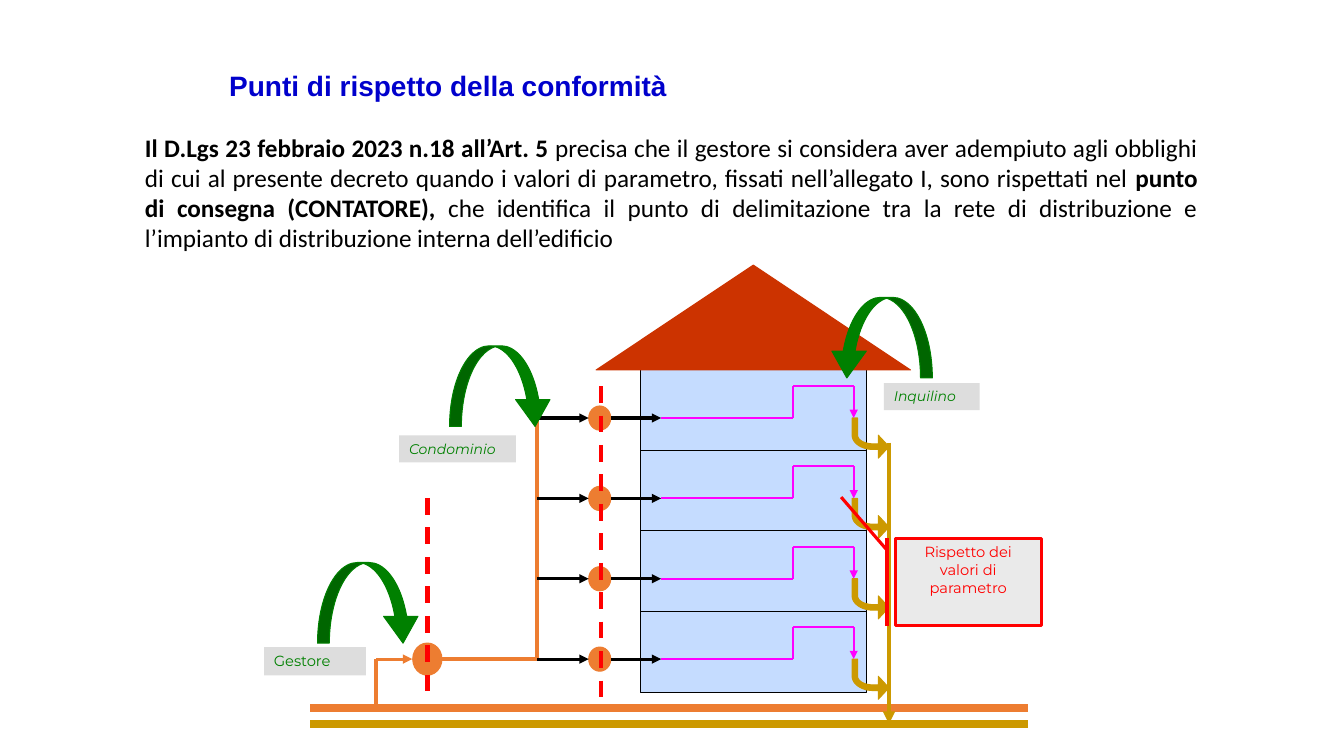
from math import cos, pi, sin

from lxml.etree import SubElement
from pptx import Presentation
from pptx.dml.color import RGBColor
from pptx.enum.dml import MSO_LINE
from pptx.enum.shapes import MSO_CONNECTOR, MSO_SHAPE
from pptx.enum.text import MSO_ANCHOR, PP_ALIGN
from pptx.oxml.ns import qn
from pptx.util import Pt

ORANGE, OCHRE, RED = "ED7D31", "CC9900", "FF0000"
GREEN, MAGENTA, BLACK = "008000", "FF00FF", "000000"


def colour(value):
    return RGBColor.from_string(value)


class Drawing:
    """Style and current page, with one method per kind of element."""

    label_font = "Montserrat"

    def __init__(self, page):
        self.page = page

    def add_words(self, shape, spans, align, **base):
        frame = shape.text_frame
        frame.word_wrap = True
        frame.vertical_anchor = MSO_ANCHOR.TOP
        para = frame.paragraphs[0]
        para.alignment = align
        for text, changes in spans:
            span = para.add_run()
            span.text = text
            values = {**base, **changes}
            span.font.color.rgb = colour(values.pop("color"))
            for name, value in values.items():
                setattr(span.font, name, value)

    def text(self, left, top, width, height, spans, align, **base):
        box = self.page.shapes.add_textbox(Pt(left), Pt(top), Pt(width), Pt(height))
        self.add_words(box, spans, align, **base)

    def paint(self, shape, fill, edge, weight):
        shape.shadow.inherit = False
        shape.fill.solid()
        shape.fill.fore_color.rgb = colour(fill)
        if edge:
            shape.line.color.rgb = colour(edge)
            shape.line.width = Pt(weight)
        else:
            shape.line.fill.background()

    def shape(self, kind, left, top, width, height, fill, edge=None, weight=0.75, adjust=()):
        shape = self.page.shapes.add_shape(kind, Pt(left), Pt(top), Pt(width), Pt(height))
        for index, value in enumerate(adjust):
            shape.adjustments[index] = value
        self.paint(shape, fill, edge, weight)
        return shape

    def line(self, x1, y1, x2, y2, ink, weight, arrow=False, dash=None):
        line = self.page.shapes.add_connector(
            MSO_CONNECTOR.STRAIGHT, Pt(x1), Pt(y1), Pt(x2), Pt(y2))
        line.line.color.rgb = colour(ink)
        line.line.width = Pt(weight)
        if dash:
            line.line.dash_style = dash
        properties = line._element.spPr
        if arrow:
            SubElement(properties.find(qn("a:ln")), qn("a:tailEnd"), type="triangle")
        SubElement(properties, qn("a:effectLst"))

    def outline(self, points, fill):
        points = [(Pt(x), Pt(y)) for x, y in points]
        builder = self.page.shapes.build_freeform(*points[0])
        builder.add_line_segments(points[1:], close=True)
        self.paint(builder.convert_to_shape(), fill, fill, 0.75)

    def drain(self, left, top):
        """Bent arrow: down, round a corner, then right."""
        turn = [pi / 2 + step * pi / 24 for step in range(13)]

        def bend(across, down):
            return [(15.1 + across * cos(a), 12.3 + down * sin(a)) for a in turn]

        head = [(18.7, 12.3), (26.3, 20.5), (18.7, 28.7), (18.7, 22.5)]
        points = (head + bend(15.1, 10.2) + [(0, 0), (3.9, 0)]
                  + bend(11.2, 6.2)[::-1] + [(18.7, 18.5)])
        self.outline([(left + x, top + y) for x, y in points], OCHRE)

    def swoosh(self, left, top, mirrored=False):
        arrow = self.shape(MSO_SHAPE.CURVED_DOWN_ARROW, left, top, 73.4, 57.6, GREEN, GREEN,
                           adjust=(0.147, 0.427, 0.333))
        if mirrored:
            arrow._element.spPr.find(qn("a:xfrm")).set("flipH", "1")

    def label(self, left, top, width, height, text, size, italic):
        plate = self.shape(MSO_SHAPE.RECTANGLE, left, top, width, height, "DDDDDD")
        self.add_words(plate, [(text, {})], PP_ALIGN.LEFT, name=self.label_font,
                       size=Pt(size), color=GREEN, italic=italic)


def main():
    deck = Presentation()
    deck.slide_width, deck.slide_height = Pt(960), Pt(540)
    draw = Drawing(deck.slides.add_slide(deck.slide_layouts[6]))

    # Heading and decree
    draw.text(149.8, 45.4, 340.6, 31.7, [("Punti di rispetto della conformità", {})],
              PP_ALIGN.CENTER, name="Arial", size=Pt(20), color="0000CC", bold=True)
    draw.text(96.5, 90.7, 766.1, 94.3, [
        ("Il D.Lgs 23 febbraio 2023 n.18 all’Art. 5 ", {"bold": True}),
        ("precisa che il gestore si considera aver adempiuto agli obblighi di cui al presente "
         "decreto quando i valori di parametro, fissati nell’allegato I, sono rispettati nel ", {}),
        ("punto di consegna (CONTATORE), ", {"bold": True}),
        ("che identifica il punto di delimitazione tra la rete di distribuzione e l’impianto di "
         "distribuzione interna dell’edificio", {}),
    ], PP_ALIGN.JUSTIFY, name="Calibri", size=Pt(18), color=BLACK, bold=False)

    # House and street pipes
    pitch = 57.4
    floors = [298.6 + pitch * index for index in range(4)]
    ground = floors[-1]
    wall_left, wall_right = 457.2, 619.2
    draw.shape(MSO_SHAPE.RECTANGLE, wall_left, 258.5, wall_right - wall_left, 236,
               "C5DCFF", BLACK)
    draw.shape(MSO_SHAPE.ISOSCELES_TRIANGLE, 425.8, 189.4, 224.6, 74.9, "CC3300", "CC3300")
    for y, ink in ((505.6, ORANGE), (517.1, OCHRE)):
        draw.line(221.8, y, 734.4, y, ink, 6)
    for y in floors[:-1]:
        draw.line(wall_left, y + 23.1, wall_right, y + 23.1, BLACK, 0.75)

    # Drain pipe
    drain_x = 635
    draw.line(drain_x, 316.1, drain_x, 517.1, OCHRE, 3, arrow=True)

    # Main meter and riser
    riser, inlet = 383.8, 268.6
    draw.shape(MSO_SHAPE.OVAL, 294.8, ground - 11.5, 20.9, 23, ORANGE, ORANGE)
    draw.line(riser, floors[0], riser, ground, ORANGE, 3)
    draw.line(315.4, ground, riser, ground, ORANGE, 3)
    draw.line(inlet, ground, inlet, 504, ORANGE, 2.25)
    draw.line(inlet, ground, 294.5, ground, ORANGE, 2.25, arrow=True)

    # Meter, supply and tap on each floor
    for y in floors:
        raised = y - 22.9
        draw.drain(608.7, y)
        draw.shape(MSO_SHAPE.OVAL, 420.5, y - 8.6, 15.8, 17.3, ORANGE, ORANGE)
        for start, end in ((riser, 420.5), (436.3, 472.3)):
            draw.line(start, y, end, y, BLACK, 2.25, arrow=True)
        draw.line(472.3, y, 566.6, y, MAGENTA, 1.5)
        draw.line(566.6, y, 566.6, raised, MAGENTA, 1.5)
        draw.line(566.6, raised, 609.8, raised, MAGENTA, 1.5)
        draw.line(609.8, raised, 609.8, y, MAGENTA, 1.5, arrow=True)

    # Boundaries of responsibility
    for x, top in ((305.3, 355.7), (429.1, 275.8)):
        draw.line(x, top, x, 499.7, RED, 3, dash=MSO_LINE.DASH)

    # Who answers for each stretch
    draw.swoosh(226.8, 401.8)
    draw.label(188.6, 462.2, 72.7, 20.2, "Gestore", 10.5, False)
    draw.swoosh(321.1, 247)
    draw.label(285.1, 311, 83.5, 19.4, "Condominio", 10, True)
    draw.swoosh(592.6, 212.4, mirrored=True)
    draw.label(631.4, 273.6, 68.4, 19.4, "Inquilino", 10, True)

    # Callout on the tap
    callout = draw.shape(MSO_SHAPE.LINE_CALLOUT_1_BORDER_AND_ACCENT_BAR, 639.4, 384.5, 104.4,
                         62.6, "EAEAEA", RED, 2.25, (0.136, -0.056, -0.47, -0.37))
    draw.add_words(callout, [("Rispetto dei valori di parametro", {})], PP_ALIGN.CENTER,
                   name=draw.label_font, size=Pt(10.5), color=RED)

    deck.save("out.pptx")


if __name__ == "__main__":
    main()
